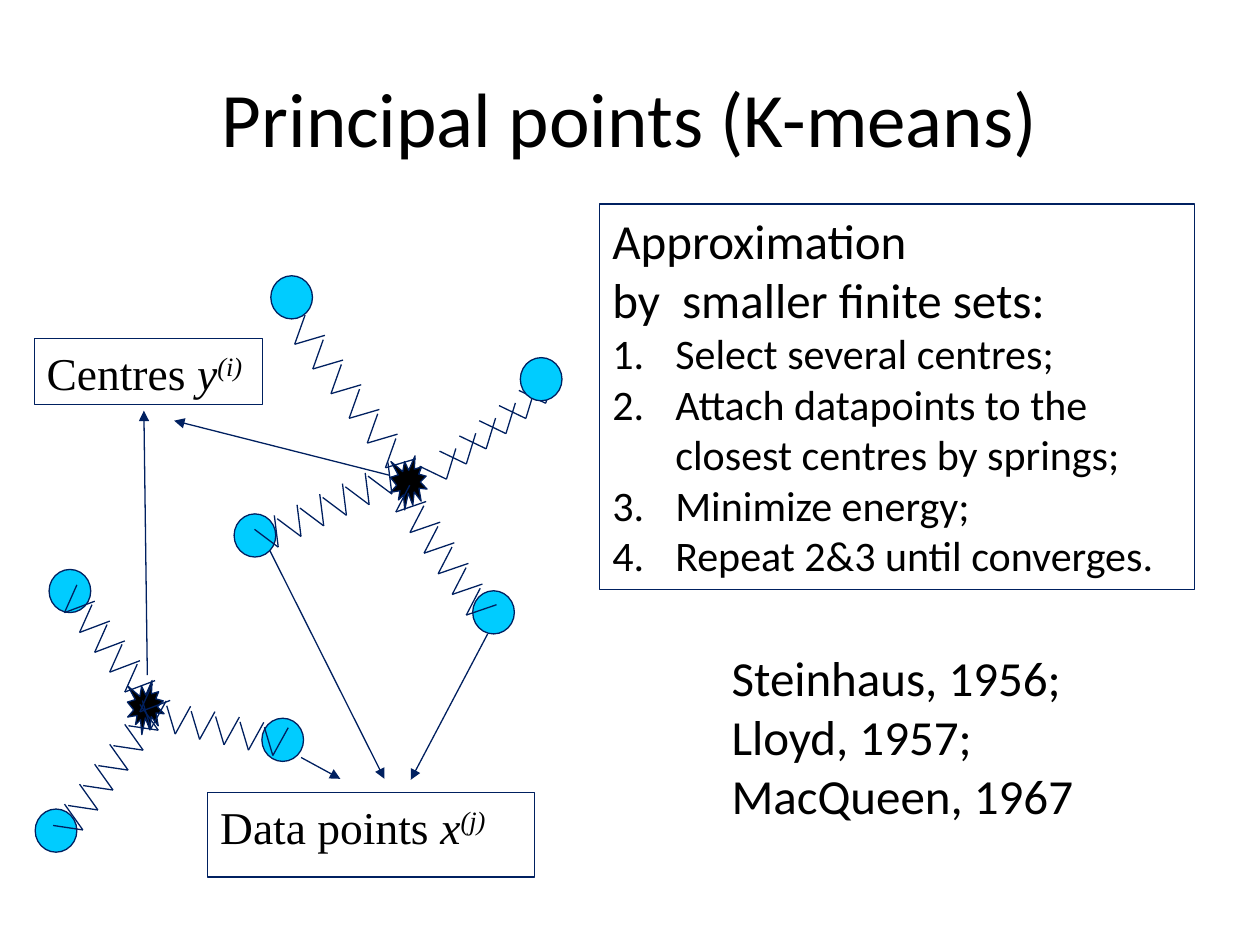
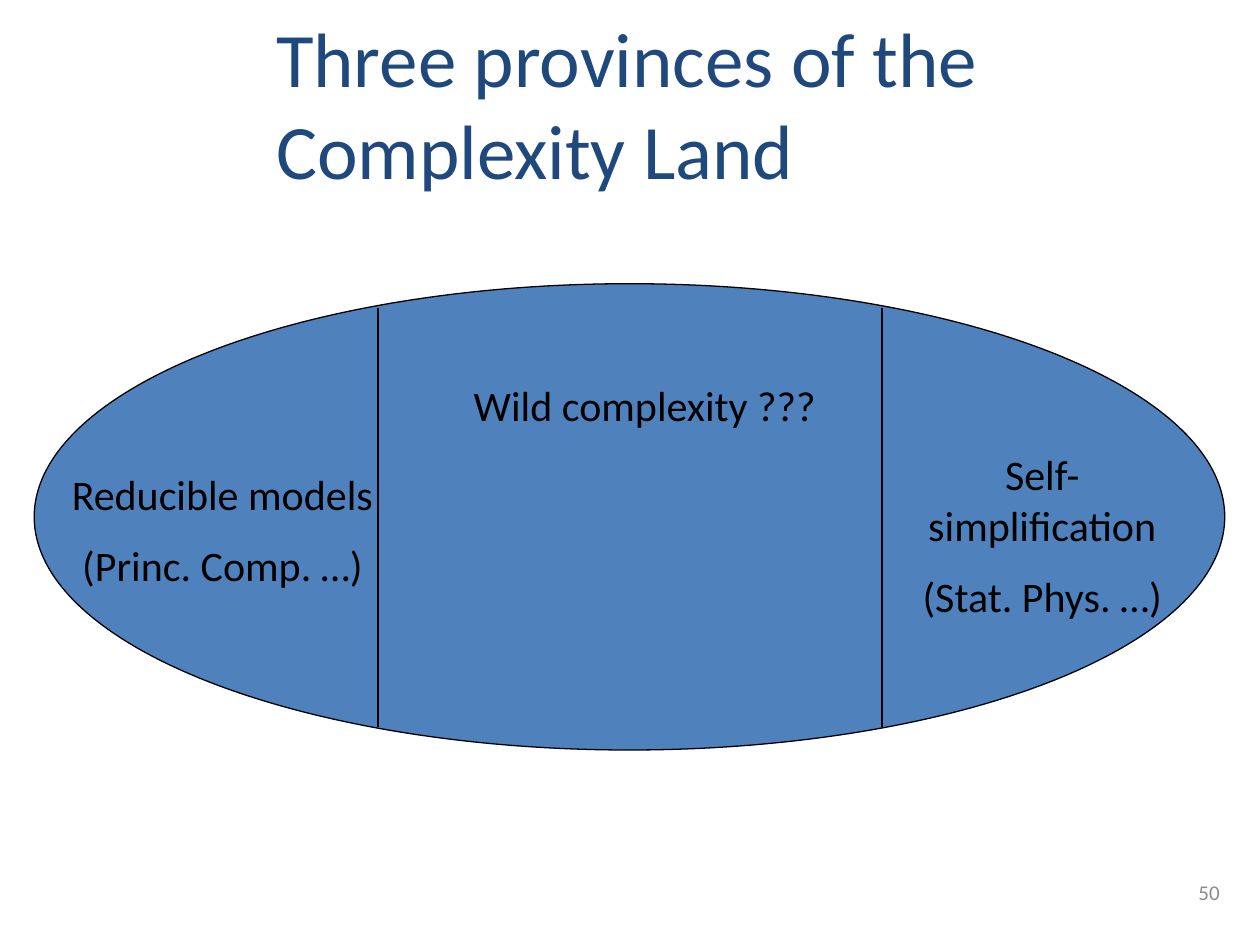
from lxml import etree
from pptx import Presentation
from pptx.dml.color import RGBColor
from pptx.enum.shapes import MSO_CONNECTOR, MSO_SHAPE
from pptx.enum.text import MSO_ANCHOR, MSO_AUTO_SIZE, PP_ALIGN
from pptx.oxml import parse_xml
from pptx.oxml.ns import nsdecls, qn
from pptx.util import Cm, Pt

STRAIGHT = MSO_CONNECTOR.STRAIGHT
OVAL, RECTANGLE, SEAL = MSO_SHAPE.OVAL, MSO_SHAPE.RECTANGLE, MSO_SHAPE.EXPLOSION1
LEFT, CENTER, RIGHT = PP_ALIGN.LEFT, PP_ALIGN.CENTER, PP_ALIGN.RIGHT
TOP, MIDDLE, BOTTOM = MSO_ANCHOR.TOP, MSO_ANCHOR.MIDDLE, MSO_ANCHOR.BOTTOM

BLACK, WHITE, NAVY = "000000", "FFFFFF", "002060"
CYAN, BLUE, TITLE_BLUE, GREY = "00CCFF", "4F81BD", "1F497D", "8C8C8C"
TITLE_SIZE = 44


def paint(shape, line, fill=None, arrow=False):
    """Give a shape or connector a thin outline, an optional fill and no shadow."""
    if fill:
        shape.fill.solid()
        shape.fill.fore_color.rgb = RGBColor.from_string(fill)
    shape.line.width = Pt(0.75)
    shape.line.color.rgb = RGBColor.from_string(line)
    properties = shape._element.spPr
    if arrow:
        etree.SubElement(properties.find(qn("a:ln")), qn("a:tailEnd"), type="triangle")
    etree.SubElement(properties, qn("a:effectLst"))


def write(box, paragraphs, size, color=BLACK, font="Calibri", align=LEFT, anchor=TOP, gap=0):
    """Fill a box; each paragraph is a list of spans."""
    frame = box.text_frame
    frame.word_wrap = True
    frame.auto_size = MSO_AUTO_SIZE.NONE
    frame.vertical_anchor = anchor
    for number, texts in enumerate(paragraphs):
        para = frame.add_paragraph() if number else frame.paragraphs[0]
        para.alignment = align
        para.space_before = Pt(gap if number else 0)
        for text in texts:
            span = para.add_run()
            span.text = text
            span.font.size = Pt(size)
            span.font.name = font
            span.font.color.rgb = RGBColor.from_string(color)


deck = Presentation()
deck.slide_width, deck.slide_height = Cm(25.4), Cm(19.05)
deck.element.set("firstSlideNum", "49")

# Slide 1: title
page = deck.slides.add_slide(deck.slide_layouts[1])
title, steps = page.placeholders
title.left, title.top, title.width, title.height = Cm(1.27), Cm(0.76), Cm(22.86), Cm(3.18)
write(title, [["Principal points (K-means)"]], TITLE_SIZE, align=CENTER, anchor=MIDDLE)

# Springs: first tooth, last tooth, then the tooth's peak and end from its start
TEETH = 6
springs_behind = [
    ((8.46, 9.4), (10.46, 7.87), (0.54, 0.26), (0.73, -0.36)),
    ((6.15, 6.35), (7.98, 8.84), (-0.21, 0.59), (0.4, 0.41)),
]
springs_in_front = [
    ((5.13, 10.67), (7.42, 9.6), (0.48, 0.36), (0.4, -0.28)),
    ((8.26, 9.78), (9.68, 11.86), (-0.28, 0.54), (0.33, 0.33)),
    ((1.55, 11.79), (3.07, 13.79), (-0.25, 0.56), (0.36, 0.33)),
    ((2.87, 14.12), (5.33, 14.66), (0.17, 0.57), (0.48, 0.01)),
    ((1.07, 16.64), (2.59, 14.63), (0.6, 0.09), (0.23, -0.43)),
]
data_points = [(0.71, 16.31), (5.28, 14.48), (0.99, 11.48), (4.72, 10.36),
               (10.49, 7.21), (5.46, 5.56), (9.53, 11.91)]
centres = [(7.87, 9.19), (2.57, 13.72)]

for springs in (springs_behind, springs_in_front):
    for first, last, peak, end in springs:
        for tooth in range(TEETH):
            x, y = (a + (b - a) * tooth / (TEETH - 1) for a, b in zip(first, last))
            corners = [(x, y), (x + peak[0], y + peak[1]), (x + end[0], y + end[1])]
            for (x1, y1), (x2, y2) in zip(corners, corners[1:]):
                paint(page.shapes.add_connector(STRAIGHT, Cm(x1), Cm(y1), Cm(x2), Cm(y2)), NAVY)
    # Data points and centres lie between the two layers of springs
    if springs is springs_behind:
        for x, y in data_points:
            paint(page.shapes.add_shape(OVAL, Cm(x), Cm(y), Cm(0.84), Cm(0.87)), NAVY, CYAN)
        for x, y in centres:
            paint(page.shapes.add_shape(SEAL, Cm(x), Cm(y), Cm(0.74), Cm(1.09)), NAVY, BLACK)

# Arrows to the labels
for x1, y1, x2, y2 in [
    (2.97, 13.61, 2.9, 8.28),
    (7.85, 9.58, 3.51, 8.48),
    (6.07, 15.27, 6.86, 15.7),
    (5.44, 11.1, 7.75, 15.7),
    (9.83, 12.78, 8.28, 15.72),
]:
    arrow = page.shapes.add_connector(STRAIGHT, Cm(x1), Cm(y1), Cm(x2), Cm(y2))
    paint(arrow, NAVY, arrow=True)

# Labels with an italic symbol and a raised index
for x, y, width, height, texts in [
    (0.69, 6.83, 4.6, 1.32, ["Centres ", "y", "(i)"]),
    (4.19, 15.98, 6.58, 1.7, ["Data points ", "x", "(j)"]),
]:
    label = page.shapes.add_shape(RECTANGLE, Cm(x), Cm(y), Cm(width), Cm(height))
    paint(label, NAVY, WHITE)
    write(label, [texts], 26, font="Times New Roman")
    word, symbol, index = label.text_frame.paragraphs[0].runs
    symbol.font.italic = index.font.italic = True
    index._r.get_or_add_rPr().set("baseline", "30000")

# Algorithm steps: two heading lines, then a numbered list
steps.left, steps.top, steps.width, steps.height = Cm(12.09), Cm(4.11), Cm(11.99), Cm(7.77)
paint(steps, NAVY)
write(steps, [
    ["Approximation"],
    ["by  smaller finite sets:"],
    ["Select several centres;"],
    ["Attach datapoints to the closest centres by springs;"],
    ["Minimize energy;"],
    ["Repeat 2&3 until converges."],
], 28)
for number, para in enumerate(steps.text_frame.paragraphs):
    indents = para._p.get_or_add_pPr()
    indents.set("marL", str(Cm(1.27)))
    indents.set("indent", str(-Cm(1.27)))
    if number < 2:
        etree.SubElement(indents, qn("a:buNone"))
    else:
        etree.SubElement(indents, qn("a:buFont"), typeface="+mj-lt")
        etree.SubElement(indents, qn("a:buAutoNum"), type="arabicPeriod")
        para.runs[0].font.size = Pt(24)

# Authors
authors = page.shapes.add_textbox(Cm(14.5), Cm(12.93), Cm(8), Cm(3.86))
write(authors, [["Steinhaus, 1956;"], ["Lloyd, 1957;"], ["MacQueen, 1967"]], 28)

# Slide 2: title
page = deck.slides.add_slide(deck.slide_layouts[5])
title = page.shapes.title
title.left, title.top, title.width, title.height = Cm(5.31), Cm(0), Cm(20.09), Cm(4.06)
write(title, [["Three provinces of the Complexity Land"]], TITLE_SIZE, TITLE_BLUE, anchor=BOTTOM)

# Land and its borders
land = page.shapes.add_shape(OVAL, Cm(0.69), Cm(5.72), Cm(24), Cm(9.4))
paint(land, BLACK, BLUE)
for x in (7.62, 17.78):
    paint(page.shapes.add_connector(STRAIGHT, Cm(x), Cm(6.2), Cm(x), Cm(14.66)), BLACK)

# Provinces
for x, y, width, height, align, paragraphs in [
    (0.69, 9.32, 7.59, 2.79, CENTER, [["Reducible models"], ["(Princ. Comp. …)"]]),
    (9.3, 7.52, 8, 1.27, LEFT, [["Wild complexity ???"]]),
    (17.91, 8.92, 6.2, 3.81, CENTER, [["Self-simplification"], ["(Stat. Phys. …)"]]),
]:
    province = page.shapes.add_textbox(Cm(x), Cm(y), Cm(width), Cm(height))
    write(province, paragraphs, 24, align=align, gap=12)

# Slide number field
footer = page.shapes.add_textbox(Cm(19.56), Cm(17.35), Cm(5.28), Cm(1.27))
write(footer, [[]], 12, align=RIGHT, anchor=MIDDLE)
footer.text_frame.paragraphs[0]._p.append(parse_xml(
    f'<a:fld {nsdecls("a")} id="{{B6F15528-21DE-4FAA-801E-634DDDAF4B2B}}" type="slidenum">'
    f'<a:rPr lang="en-GB" sz="1200"><a:solidFill><a:srgbClr val="{GREY}"/></a:solidFill>'
    '<a:latin typeface="Calibri"/></a:rPr><a:t>50</a:t></a:fld>'))

deck.save("out.pptx")
